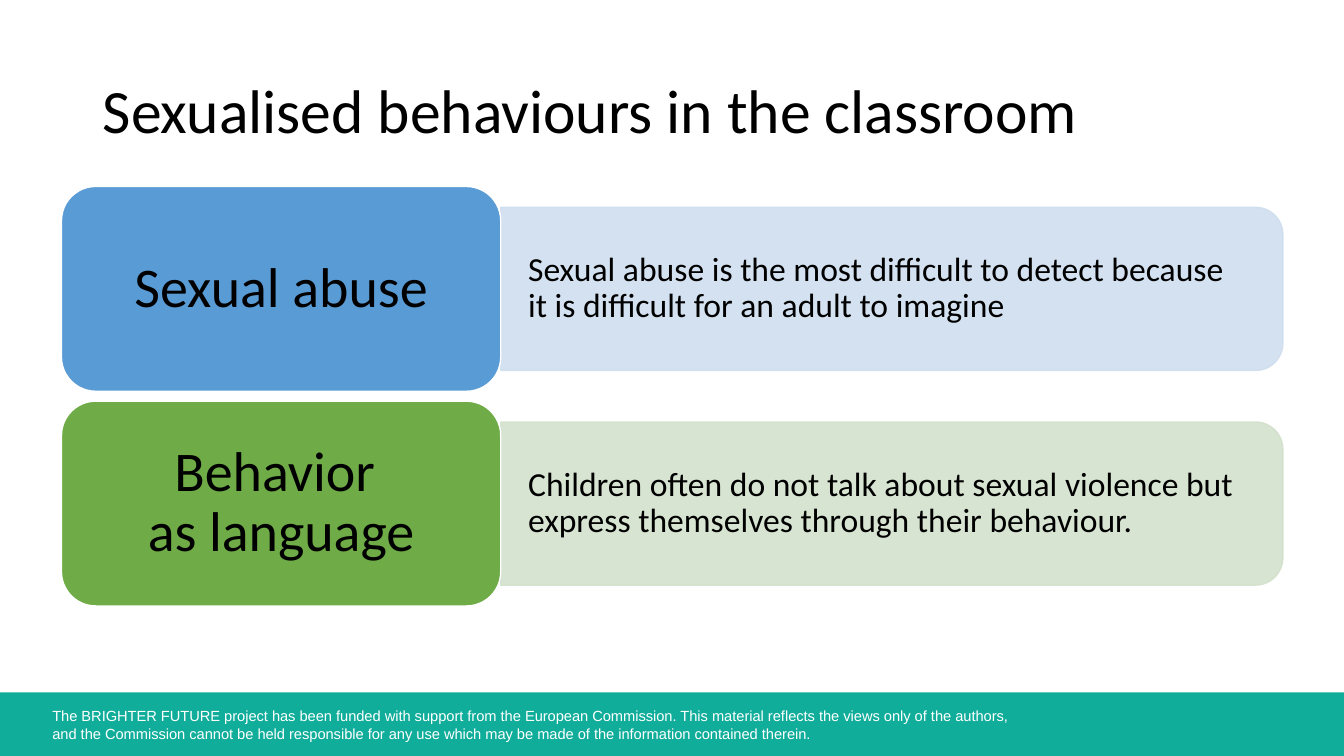
from dataclasses import dataclass

from lxml import etree
from pptx import Presentation
from pptx import util as u
from pptx.dml.color import RGBColor
from pptx.enum import shapes, text
from pptx.oxml.ns import qn

SLIDE_WIDTH, SLIDE_HEIGHT = 33.87, 19.05
FOOTER_TOP = 17.45
CARD_LEFT, FIRST_CARD_TOP = 1.55, 4.7
CARD_WIDTH, CARD_HEIGHT, CARD_PITCH = 11.07, 5.16, 5.41
PANEL_WIDTH, PANEL_HEIGHT = 19.71, 4.11
CORNER = 0.167


@dataclass
class Topic:
    label: str
    description: str
    card_color: str
    panel_color: str


TOPICS = [
    Topic("Sexual abuse",
          "Sexual abuse is the most difficult to detect because it is difficult "
          "for an adult to imagine",
          "599BD5", "CFDEEF"),
    Topic("Behavior \nas language",
          "Children often do not talk about sexual violence but express themselves "
          "through their behaviour.",
          "6FAB46", "D3E1CC"),
]


def rgb(value: str) -> RGBColor:
    return RGBColor.from_string(value)


def write(shape, words: str, *, size: float, font: str = "Calibri",
          color: str = "000000", align=text.PP_ALIGN.LEFT,
          anchor=text.MSO_ANCHOR.MIDDLE, spacing: float = 0.9,
          margin_x: float = 0.25, margin_y: float = 0.13) -> None:
    frame = shape.text_frame
    frame.word_wrap = True
    frame.vertical_anchor = anchor
    frame.margin_left = frame.margin_right = u.Cm(margin_x)
    frame.margin_top = frame.margin_bottom = u.Cm(margin_y)
    paragraph = frame.paragraphs[0]
    paragraph.text = words
    paragraph.alignment = align
    paragraph.line_spacing = spacing
    for run in paragraph.runs:
        run.font.name = font
        run.font.size = u.Pt(size)
        run.font.color.rgb = rgb(color)


def add_text(slide, box: tuple[float, ...], words: str, **text_format):
    shape = slide.shapes.add_textbox(*map(u.Cm, box))
    write(shape, words, **text_format)
    return shape


def add_box(slide, kind, box: tuple[float, ...], fill: str,
            line: str | None = None):
    shape = slide.shapes.add_shape(kind, *map(u.Cm, box))
    shape.shadow.inherit = False
    shape.fill.solid()
    shape.fill.fore_color.rgb = rgb(fill)
    if line:
        shape.line.color.rgb = rgb(line)
        shape.line.width = u.Pt(1)
    else:
        shape.line.fill.background()
    return shape


def set_opacity(shape, percent: int) -> None:
    for color in shape._element.spPr.iter(qn("a:srgbClr")):
        etree.SubElement(color, qn("a:alpha"), val=str(percent * 1000))


def add_topic(slide, topic: Topic, top: float) -> None:
    panel_left = CARD_LEFT + CARD_WIDTH
    middle = top + CARD_HEIGHT / 2

    # Panel: an upright shape turned so its rounded end faces right
    panel = add_box(slide, shapes.MSO_SHAPE.ROUND_2_SAME_RECTANGLE,
                    (panel_left + (PANEL_WIDTH - PANEL_HEIGHT) / 2,
                     middle - PANEL_WIDTH / 2, PANEL_HEIGHT, PANEL_WIDTH),
                    topic.panel_color, topic.panel_color)
    panel.rotation = 90
    panel.adjustments[0] = CORNER
    set_opacity(panel, 89)
    add_text(slide, (panel_left, middle - 1.85, 19.46, 3.7),
             topic.description, size=24, margin_x=0.69, margin_y=0.36)

    # Coloured card with its label
    card = add_box(slide, shapes.MSO_SHAPE.ROUNDED_RECTANGLE,
                   (CARD_LEFT, top, CARD_WIDTH, CARD_HEIGHT),
                   topic.card_color, "FFFFFF")
    card.adjustments[0] = CORNER
    write(card, topic.label, size=40, align=text.PP_ALIGN.CENTER)


def main() -> None:
    presentation = Presentation()
    presentation.slide_width = u.Cm(SLIDE_WIDTH)
    presentation.slide_height = u.Cm(SLIDE_HEIGHT)
    slide = presentation.slides.add_slide(presentation.slide_layouts[6])

    # Footer
    add_box(slide, shapes.MSO_SHAPE.RECTANGLE,
            (0, FOOTER_TOP, SLIDE_WIDTH, SLIDE_HEIGHT - FOOTER_TOP), "10AD9A")
    add_text(slide, (1.07, 17.68, 25.4, 1.14),
             "The BRIGHTER FUTURE project has been funded with support from the "
             "European Commission. This material reflects the views only of the "
             "authors, \nand the Commission cannot be held responsible for any use "
             "which may be made of the information contained therein.",
             size=10.5, font="Arial", color="FFFFFF", spacing=1.0,
             anchor=text.MSO_ANCHOR.TOP)

    # Title
    add_text(slide, (2.34, 1.02, 29.21, 3.68),
             "Sexualised behaviours in the classroom", size=44)

    # Topics
    for row, topic in enumerate(TOPICS):
        add_topic(slide, topic, FIRST_CARD_TOP + row * CARD_PITCH)

    presentation.save("out.pptx")


if __name__ == "__main__":
    main()
